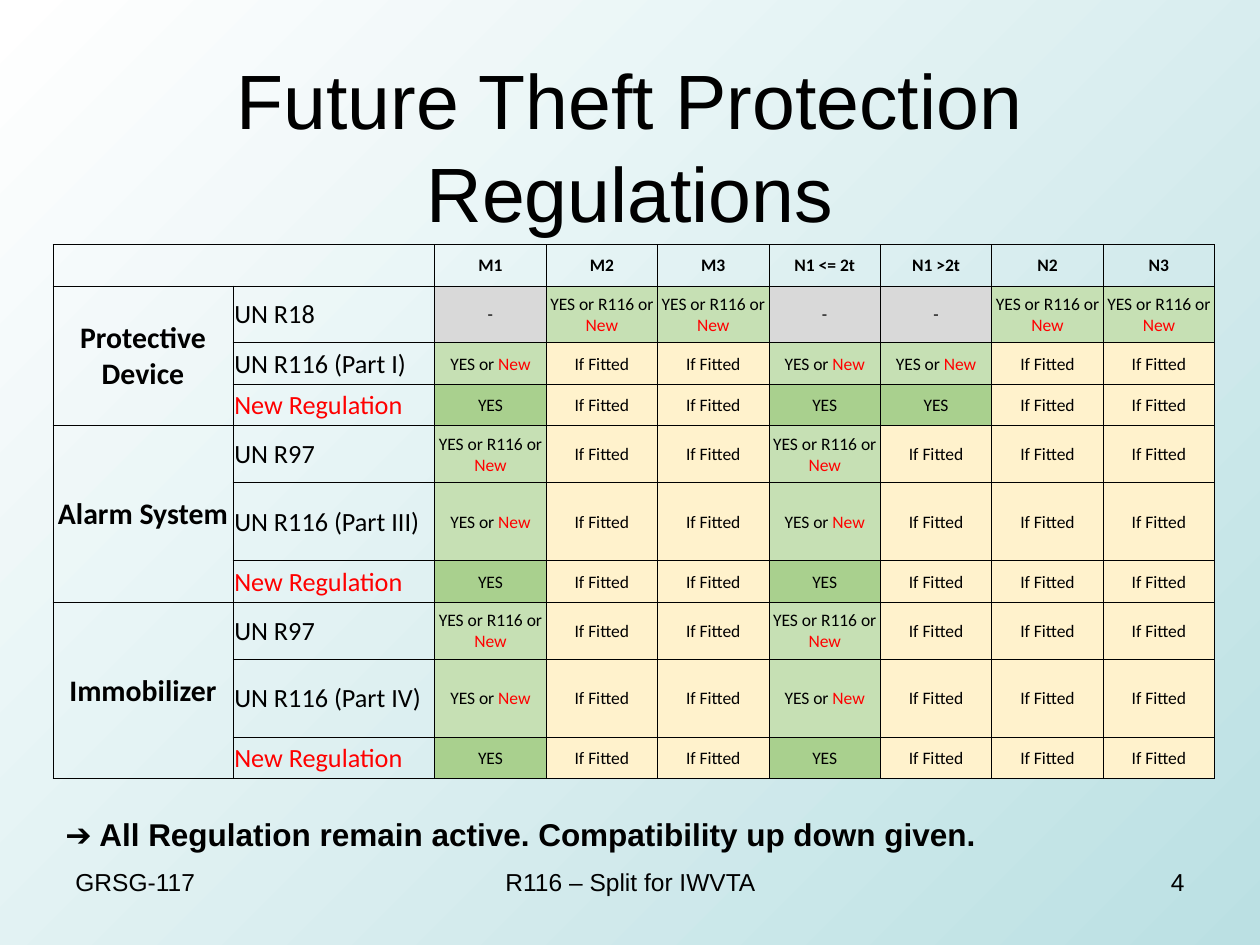
from lxml import etree
from pptx import Presentation
from pptx.dml.color import RGBColor
from pptx.enum.text import MSO_ANCHOR as Anchor, PP_ALIGN as Align
from pptx.oxml import parse_xml
from pptx.oxml.ns import nsdecls
from pptx.util import Inches, Pt

BLACK, RED = "000000", "FF0000"
CLASSES = ["M1", "M2", "M3", "N1 <= 2t", "N1 >2t", "N2", "N3"]
# One letter per vehicle class: the wording and the fill it stands for
STATUS = {
    "-": ("-", "D9D9D9"),
    "R": ("YES or R116 or New", "C6E0B4"),
    "O": ("YES or New", "C6E0B4"),
    "Y": ("YES", "A9D08E"),
    "F": ("If Fitted", "FFF2CC"),
}
GROUPS = [
    ("Protective Device", [("UN R18", "-RR--RR"),
                           ("UN R116 (Part I)", "OFFOOFF"),
                           ("New Regulation", "YFFYYFF")]),
    ("Alarm System", [("UN R97", "RFFRFFF"),
                      ("UN R116 (Part III)", "OFFOFFF"),
                      ("New Regulation", "YFFYFFF")]),
    ("Immobilizer", [("UN R97", "RFFRFFF"),
                     ("UN R116 (Part IV)", "OFFOFFF"),
                     ("New Regulation", "YFFYFFF")]),
]
LABEL_WIDTHS = [1.43, 1.6]
ROW_HEIGHTS = [0.33, 0.45, 0.33, 0.33] + [0.45, 0.62, 0.33] * 2


def color(value):
    return RGBColor.from_string(value)


def style(para, size, face, align=Align.LEFT, bold=False, shade=BLACK):
    para.alignment = align
    font = para.font
    font.size, font.name, font.bold = Pt(size), face, bold
    font.color.rgb = color(shade)


def add_background(page):
    fill = page.background.fill
    fill.gradient()
    fill.gradient_angle = 315
    for stop, shade in zip(fill.gradient_stops, ["FFFFFF", "BBE0E3"]):
        stop.color.rgb = color(shade)


def add_text(page, area, text, size, align=Align.LEFT, bold=False, wrap=True, top=0.05):
    box = page.shapes.add_textbox(*map(Inches, area))
    frame = box.text_frame
    frame.word_wrap = wrap
    frame.margin_top = Inches(top)
    para = frame.paragraphs[0]
    para.add_run().text = text
    style(para, size, "Arial", align, bold)


def prepare_cell(cell):
    """Set thin margins, no fill and a black border on every side."""
    cell.margin_left = cell.margin_top = cell.margin_right = Inches(0.01)
    cell.margin_bottom = 0
    cell.vertical_anchor = Anchor.MIDDLE
    cell.fill.background()
    properties = cell._tc.get_or_add_tcPr()
    for place, side in enumerate("LRTB"):
        border = parse_xml(f'<a:ln{side} {nsdecls("a")} w="{Pt(0.5)}"/>')
        solid = etree.SubElement(border, border.tag.replace(f"ln{side}", "solidFill"))
        etree.SubElement(solid, border.tag.replace(f"ln{side}", "srgbClr"), val=BLACK)
        properties.insert(place, border)


def write_cell(cell, text, size, align=Align.CENTER, bold=False, fill=None):
    """Write the text, with everything from the word New onwards in red."""
    para = cell.text_frame.paragraphs[0]
    plain, new, rest = text.partition("New")
    for part, shade in [(plain, BLACK), (new + rest, RED)]:
        if part:
            span = para.add_run()
            span.text = part
            span.font.color.rgb = color(shade)
    style(para, size, "Calibri", align, bold)
    if fill:
        cell.fill.solid()
        cell.fill.fore_color.rgb = color(fill)


def add_regulation_table(page, left, top, width):
    class_width = (width - sum(LABEL_WIDTHS)) / len(CLASSES)
    widths = LABEL_WIDTHS + [class_width] * len(CLASSES)
    area = [left, top, width, sum(ROW_HEIGHTS)]
    table = page.shapes.add_table(len(ROW_HEIGHTS), len(widths), *map(Inches, area)).table
    table.first_row = table.horz_banding = False
    for column, size in zip(table.columns, widths):
        column.width = Inches(size)
    for row, size in zip(table.rows, ROW_HEIGHTS):
        row.height = Inches(size)
    for cell in table.iter_cells():
        prepare_cell(cell)

    table.cell(0, 0).merge(table.cell(0, 1))
    for col, name in enumerate(CLASSES, 2):
        write_cell(table.cell(0, col), name, 10, bold=True)
    first = 1
    for group, regulations in GROUPS:
        table.cell(first, 0).merge(table.cell(first + len(regulations) - 1, 0))
        write_cell(table.cell(first, 0), group, 17, bold=True)
        for row, (regulation, codes) in enumerate(regulations, first):
            write_cell(table.cell(row, 1), regulation, 15, Align.LEFT)
            for col, code in enumerate(codes, 2):
                text, fill = STATUS[code]
                write_cell(table.cell(row, col), text, 10, fill=fill)
        first += len(regulations)


def add_footer(page, top, height):
    for left, width, text, align in [
        (0.5, 2.33, "GRSG-117", Align.LEFT),
        (3.42, 3.17, "R116 – Split for IWVTA", Align.CENTER),
        (7.17, 2.33, "4", Align.RIGHT),
    ]:
        add_text(page, (left, top, width, height), text, 14, align)


def main():
    deck = Presentation()
    deck.slide_width, deck.slide_height = Inches(10), Inches(7.5)
    page = deck.slides.add_slide(deck.slide_layouts[6])
    add_background(page)
    add_text(page, (0.5, 0.3, 9, 1.25), "Future Theft Protection Regulations",
             44, Align.CENTER, top=0.12)
    add_regulation_table(page, 0.42, 1.94, 9.22)
    add_text(page, (0.42, 6.42, 7.5, 0.4),
             "➔ All Regulation remain active. Compatibility up down given.",
             18, bold=True, wrap=False)
    add_footer(page, 6.83, 0.52)
    deck.save("out.pptx")


if __name__ == "__main__":
    main()
